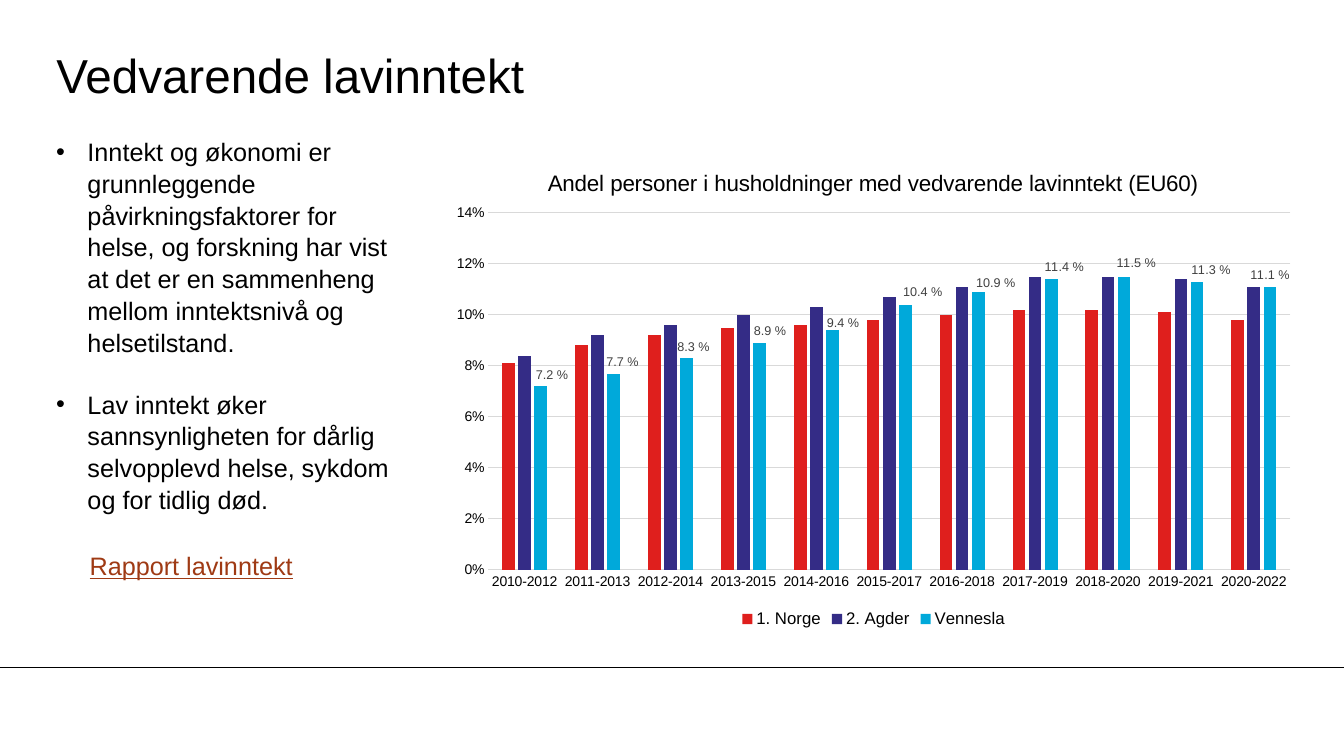
from lxml import etree
from pptx import Presentation
from pptx.chart.data import CategoryChartData
from pptx.dml.color import RGBColor
from pptx.enum.chart import XL_CHART_TYPE, XL_LABEL_POSITION, XL_LEGEND_POSITION, XL_TICK_MARK
from pptx.enum.text import MSO_ANCHOR
from pptx.oxml.ns import qn
from pptx.util import Inches, Pt

COLUMNS = XL_CHART_TYPE.COLUMN_CLUSTERED
OUTSIDE_END = XL_LABEL_POSITION.OUTSIDE_END
BOTTOM = XL_LEGEND_POSITION.BOTTOM
NO_TICK = XL_TICK_MARK.NONE
MIDDLE = MSO_ANCHOR.MIDDLE

COLORS = {"text": "000000", "link": "9F3A14", "label": "404040", "grid": "D9D9D9",
          "1. Norge": "DF1F1D", "2. Agder": "342C86", "Vennesla": "00A9DA"}
FONT = "Arial"
HEADING = "Vedvarende lavinntekt"
BULLETS = [
    "Inntekt og økonomi er grunnleggende påvirkningsfaktorer for helse, og forskning har vist "
    "at det er en sammenheng mellom inntektsnivå og helsetilstand.",
    "Lav inntekt øker sannsynligheten for dårlig selvopplevd helse, sykdom og for tidlig død.",
]
REPORT = "Rapport lavinntekt"
CHART_TITLE = "Andel personer i husholdninger med vedvarende lavinntekt (EU60)"
FIRST_YEAR = 2010
PERCENTAGES = {
    "1. Norge": [8.1, 8.8, 9.2, 9.5, 9.6, 9.8, 10.0, 10.2, 10.2, 10.1, 9.8],
    "2. Agder": [8.4, 9.2, 9.6, 10.0, 10.3, 10.7, 11.1, 11.5, 11.5, 11.4, 11.1],
    "Vennesla": [7.2, 7.7, 8.3, 8.9, 9.4, 10.4, 10.9, 11.4, 11.5, 11.3, 11.1],
}
LABELLED = "Vennesla"
LABEL_FORMAT = "0.0\\ %"
LABEL_SHIFTS = [(0.013, 0), (0.01, 0), (0.008, 0), (0.012, 0), (0.012, 0.01), (0.02, -0.002),
                (0.02, 0.006), (0.015, -0.002), (0.014, -0.004), (0.016, 0)]
PLOT_LAYOUT = {"layoutTarget": "inner", "xMode": "edge", "yMode": "edge",
               "x": 0.056, "y": 0.143, "w": 0.924, "h": 0.73}
TITLE_LAYOUT = {"xMode": "edge", "yMode": "edge", "x": 0.12, "y": 0.045}


def color(name):
    """Return the named colour."""
    return RGBColor.from_string(COLORS[name])


def set_font(font, size, color_name="text", **extra):
    """Apply the slide typeface with a size and colour."""
    for name, value in {"name": FONT, "size": Pt(size), "bold": False, **extra}.items():
        setattr(font, name, value)
    font.color.rgb = color(color_name)


def set_line(line, color_name):
    """Give a line its colour and the common thin width."""
    line.color.rgb = color(color_name)
    line.width = Pt(0.75)


def make_layout(values):
    """Build a manual chart layout element."""
    layout = etree.Element(qn("c:layout"))
    manual = etree.SubElement(layout, qn("c:manualLayout"))
    for name, value in values.items():
        etree.SubElement(manual, qn(f"c:{name}")).set("val", str(value))
    return layout


def place_layout(parent, previous_tag, values):
    """Replace the layout of a chart element, keeping the schema order."""
    for old in parent.findall(qn("c:layout")):
        parent.remove(old)
    layout = make_layout(values)
    if previous_tag:
        parent.find(qn(previous_tag)).addnext(layout)
    else:
        parent.insert(0, layout)


def add_text(slide, box, texts, size, color_name="text", bullet=False, inset=None,
             anchor=None, line_spacing=None, **extra):
    """Add a wrapped text box with one paragraph per text."""
    frame = slide.shapes.add_textbox(*map(Inches, box)).text_frame
    frame.word_wrap = True
    if anchor is not None:
        frame.vertical_anchor = anchor
    if inset is not None:
        for side in ("left", "top", "right", "bottom"):
            setattr(frame, f"margin_{side}", Inches(inset))
    for index, text in enumerate(texts):
        paragraph = frame.add_paragraph() if index else frame.paragraphs[0]
        if bullet:
            properties = paragraph._p.get_or_add_pPr()
            properties.set("marL", str(Inches(0.31)))
            properties.set("indent", str(-Inches(0.31)))
            etree.SubElement(properties, qn("a:buFont")).set("typeface", FONT)
            etree.SubElement(properties, qn("a:buChar")).set("char", "•")
        if index:
            paragraph.space_before = Pt(21.6)
        if line_spacing:
            paragraph.line_spacing = line_spacing
        run = paragraph.add_run()
        run.text = text
        set_font(run.font, size, color_name, **extra)


def format_axes(chart):
    """Style both axes and the gridlines."""
    for axis in (chart.category_axis, chart.value_axis):
        axis.major_tick_mark = axis.minor_tick_mark = NO_TICK
        set_font(axis.tick_labels.font, 10)
    set_line(chart.category_axis.format.line, "grid")
    value_axis = chart.value_axis
    for name, value in {"minimum_scale": 0, "maximum_scale": 0.14, "major_unit": 0.02}.items():
        setattr(value_axis, name, value)
    value_axis.format.line.fill.background()
    set_line(value_axis.major_gridlines.format.line, "grid")
    value_axis.tick_labels.number_format = "0%"
    value_axis.tick_labels.number_format_is_linked = False


def add_labels(series):
    """Show the values of a series, shifting the early labels."""
    labels = series.data_labels
    for name, value in {"show_value": True, "number_format": LABEL_FORMAT,
                        "number_format_is_linked": False, "position": OUTSIDE_END}.items():
        setattr(labels, name, value)
    set_font(labels.font, 9, "label")
    for index, (x, y) in enumerate(LABEL_SHIFTS):
        label = series.points[index].data_label
        set_font(label.font, 9, "label")
        label.position = OUTSIDE_END
        element = labels._element.findall(qn("c:dLbl"))[index]
        place_layout(element, "c:idx", {"x": x, "y": y})
        number_format = etree.Element(qn("c:numFmt"), formatCode=LABEL_FORMAT, sourceLinked="0")
        element.find(qn("c:layout")).addnext(number_format)


def add_income_chart(slide):
    """Add the clustered column chart of persistent low income."""
    data = CategoryChartData(number_format="0.0%")
    count = len(PERCENTAGES[LABELLED])
    data.categories = [f"{year}-{year + 2}" for year in range(FIRST_YEAR, FIRST_YEAR + count)]
    for name, values in PERCENTAGES.items():
        data.add_series(name, [round(value / 100, 3) for value in values])
    box = map(Inches, (4.36, 1.42, 8.61, 4.85))
    chart = slide.shapes.add_chart(COLUMNS, *box, data).chart
    set_font(chart.font, 10)
    chart.has_title = True
    chart.chart_title.text_frame.text = CHART_TITLE
    set_font(chart.chart_title.text_frame.paragraphs[0].runs[0].font, 16)
    place_layout(chart.chart_title._element, "c:tx", TITLE_LAYOUT)
    chart.has_legend = True
    chart.legend.position = BOTTOM
    chart.legend.include_in_layout = False
    set_font(chart.legend.font, 12)
    format_axes(chart)
    plot = chart.plots[0]
    for name, value in {"gap_width": 219, "overlap": -27, "vary_by_categories": False}.items():
        setattr(plot, name, value)
    for series in plot.series:
        series.format.fill.solid()
        series.format.fill.fore_color.rgb = color(series.name)
        if series.name == LABELLED:
            add_labels(series)
    place_layout(chart._chartSpace.find(".//" + qn("c:plotArea")), None, PLOT_LAYOUT)


def main():
    """Build and save the slide."""
    presentation = Presentation()
    presentation.slide_width, presentation.slide_height = Inches(13.33), Inches(7.5)
    slide = presentation.slides.add_slide(presentation.slide_layouts[6])
    ends = map(Inches, (0, 6.62, 13.33, 6.62))
    footer_line = slide.shapes.add_connector(1, *ends)
    set_line(footer_line.line, "text")
    etree.SubElement(footer_line._element.spPr, qn("a:effectLst"))
    add_text(slide, (0.56, 0.36, 11.1, 0.75), [HEADING], 34, inset=0, anchor=MIDDLE)
    add_text(slide, (0.46, 1.29, 3.5, 3.74), BULLETS, 18, bullet=True, line_spacing=1.05)
    add_text(slide, (0.79, 5.4, 2.65, 0.4), [REPORT], 18, "link", line_spacing=1.05,
             underline=True)
    add_income_chart(slide)
    presentation.save("out.pptx")


if __name__ == "__main__":
    main()
